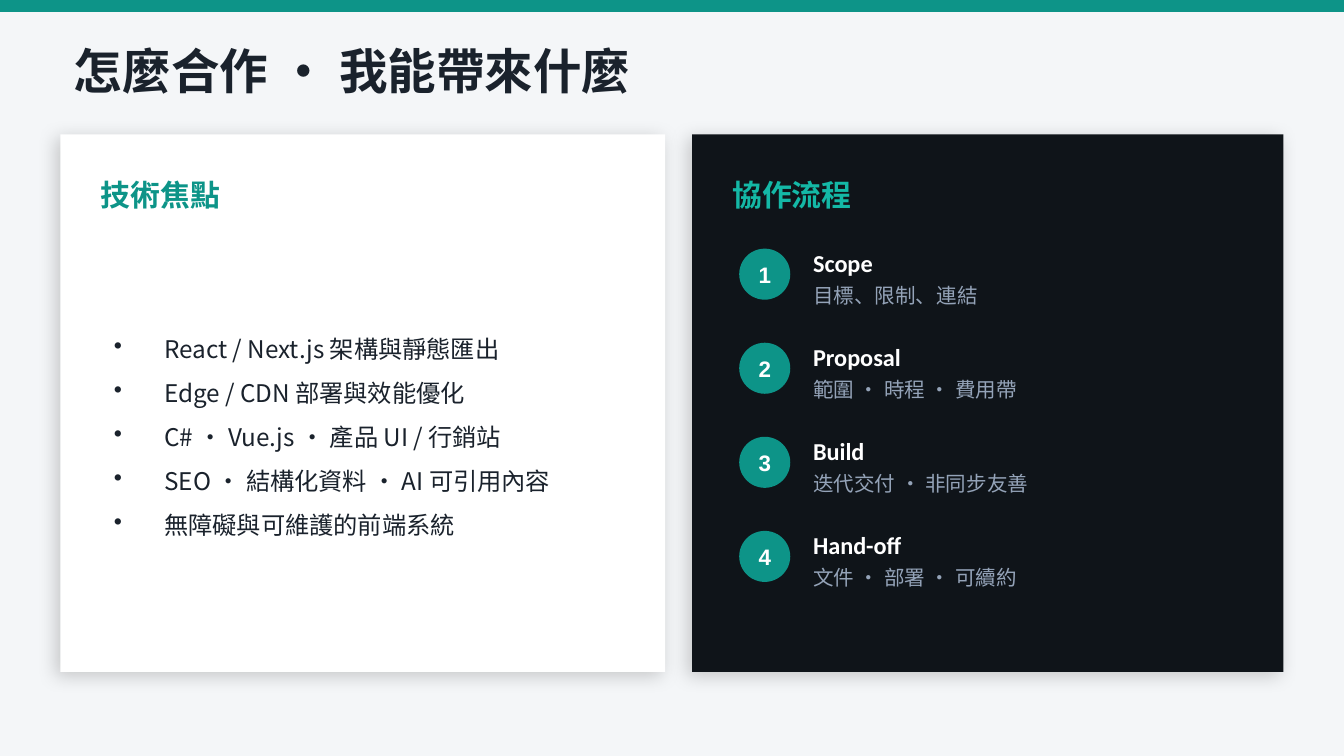
import pptx
import pptx.dml.color
import pptx.enum.shapes
import pptx.enum.text
import pptx.oxml
import pptx.oxml.ns
import pptx.util
from lxml import etree

Pt = pptx.util.Pt
SHAPE = pptx.enum.shapes.MSO_SHAPE
ALIGN = pptx.enum.text.PP_ALIGN
qn = pptx.oxml.ns.qn

CJK = "Noto Sans CJK TC"
TEAL, INK, WHITE, GREY = "0D9488", "1A222C", "FFFFFF", "94A3B8"

FOCUS = [
    "React / Next.js 架構與靜態匯出",
    "Edge / CDN 部署與效能優化",
    "C# · Vue.js · 產品 UI / 行銷站",
    "SEO · 結構化資料 · AI 可引用內容",
    "無障礙與可維護的前端系統",
]
STEPS = [
    ("Scope", "目標、限制、連結"),
    ("Proposal", "範圍 · 時程 · 費用帶"),
    ("Build", "迭代交付 · 非同步友善"),
    ("Hand-off", "文件 · 部署 · 可續約"),
]


def rgb(value):
    return pptx.dml.color.RGBColor.from_string(value)


def format_runs(p, size, font, color, bold):
    for r in p.runs:
        r.font.size = Pt(size)
        r.font.bold = bold
        r.font.color.rgb = rgb(color)
        r.font.name = font
        etree.SubElement(r.font._element, qn("a:ea"), typeface=font)


def set_text(sp, text, size, font, color, bold=False, align=ALIGN.LEFT, insets=(0, 0)):
    tf = sp.text_frame
    tf.text = text
    tf.word_wrap = True
    tf.auto_size = pptx.enum.text.MSO_AUTO_SIZE.NONE
    tf.vertical_anchor = pptx.enum.text.MSO_ANCHOR.MIDDLE
    tf.margin_left = tf.margin_right = Pt(insets[0])
    tf.margin_top = tf.margin_bottom = Pt(insets[1])
    for p in tf.paragraphs:
        p.alignment = align
        format_runs(p, size, font, color, bold)
    return tf


def add_text(s, box, text, *style, **options):
    sp = s.shapes.add_textbox(*map(Pt, box))
    return set_text(sp, text, *style, **options)


def add_block(s, kind, box, color):
    sp = s.shapes.add_shape(kind, *map(Pt, box))
    sp.shadow.inherit = False
    sp.fill.solid()
    sp.fill.fore_color.rgb = rgb(color)
    sp.line.fill.background()
    return sp


def add_shadow(sp):
    effects = sp._element.spPr.find(qn("a:effectLst"))
    shadow = etree.SubElement(
        effects, qn("a:outerShdw"), blurRad=str(Pt(10)), dist=str(Pt(3)),
        dir=str(135 * 60000), algn="bl", rotWithShape="0")
    color = etree.SubElement(shadow, qn("a:srgbClr"), val="000000")
    etree.SubElement(color, qn("a:alpha"), val="18000")


def add_header(s, width):
    # Accent bar across the top
    bar = add_block(s, SHAPE.RECTANGLE, (0, 0, width, 5.76), TEAL)
    bar.line.color.rgb = rgb(TEAL)
    bar.line.width = Pt(1)
    # Title
    title = s.shapes.title
    title.left, title.top, title.width, title.height = map(Pt, (39.6, 21.6, 648, 32.4))
    set_text(title, "怎麼合作 · 我能帶來什麼", 26, CJK, INK, True)


def add_card(s, box, fill, heading, color):
    x, y, w, h = box
    add_shadow(add_block(s, SHAPE.RECTANGLE, box, fill))
    add_text(s, (x + 21.6, y + 18, 280.8, 28.8), heading, 16, CJK, color, True)


def add_focus_card(s, box):
    add_card(s, box, WHITE, "技術焦點", TEAL)
    # Bulleted list
    x, y, w, h = box
    tf = add_text(s, (x + 21.6, y + 61.2, 280.8, 201.6), "\n".join(FOCUS),
                  13, CJK, INK, insets=(7.2, 3.6))
    for p in tf.paragraphs:
        p.space_after = Pt(8)
        pPr = p._p.get_or_add_pPr()
        pPr.set("marL", str(Pt(27)))
        pPr.set("indent", str(Pt(-27)))
        etree.SubElement(pPr, qn("a:buChar"), char="•")


def add_process_card(s, box):
    add_card(s, box, "0F1419", "協作流程", "14B8A6")
    # Numbered steps at an even pitch
    x, y, w, h = box
    for i, (name, detail) in enumerate(STEPS):
        top = y + 61.2 + i * 50.4
        badge = add_block(s, SHAPE.OVAL, (x + 25.2, top, 27.36, 27.36), TEAL)
        set_text(badge, str(i + 1), 12, "Arial", WHITE, True, ALIGN.CENTER)
        add_text(s, (x + 64.8, top - 1.44, 230.4, 18), name, 13, "Calibri", WHITE, True)
        add_text(s, (x + 64.8, top + 15.84, 230.4, 18), detail, 11, CJK, GREY)


def main():
    prs = pptx.Presentation()
    prs.slide_width, prs.slide_height = Pt(720), Pt(405)
    s = prs.slides.add_slide(prs.slide_layouts[5])
    s.background.fill.solid()
    s.background.fill.fore_color.rgb = rgb("F4F6F8")
    add_header(s, 720)
    add_focus_card(s, (32.4, 72, 324, 288))
    add_process_card(s, (370.8, 72, 316.8, 288))
    prs.save("out.pptx")


if __name__ == "__main__":
    main()
